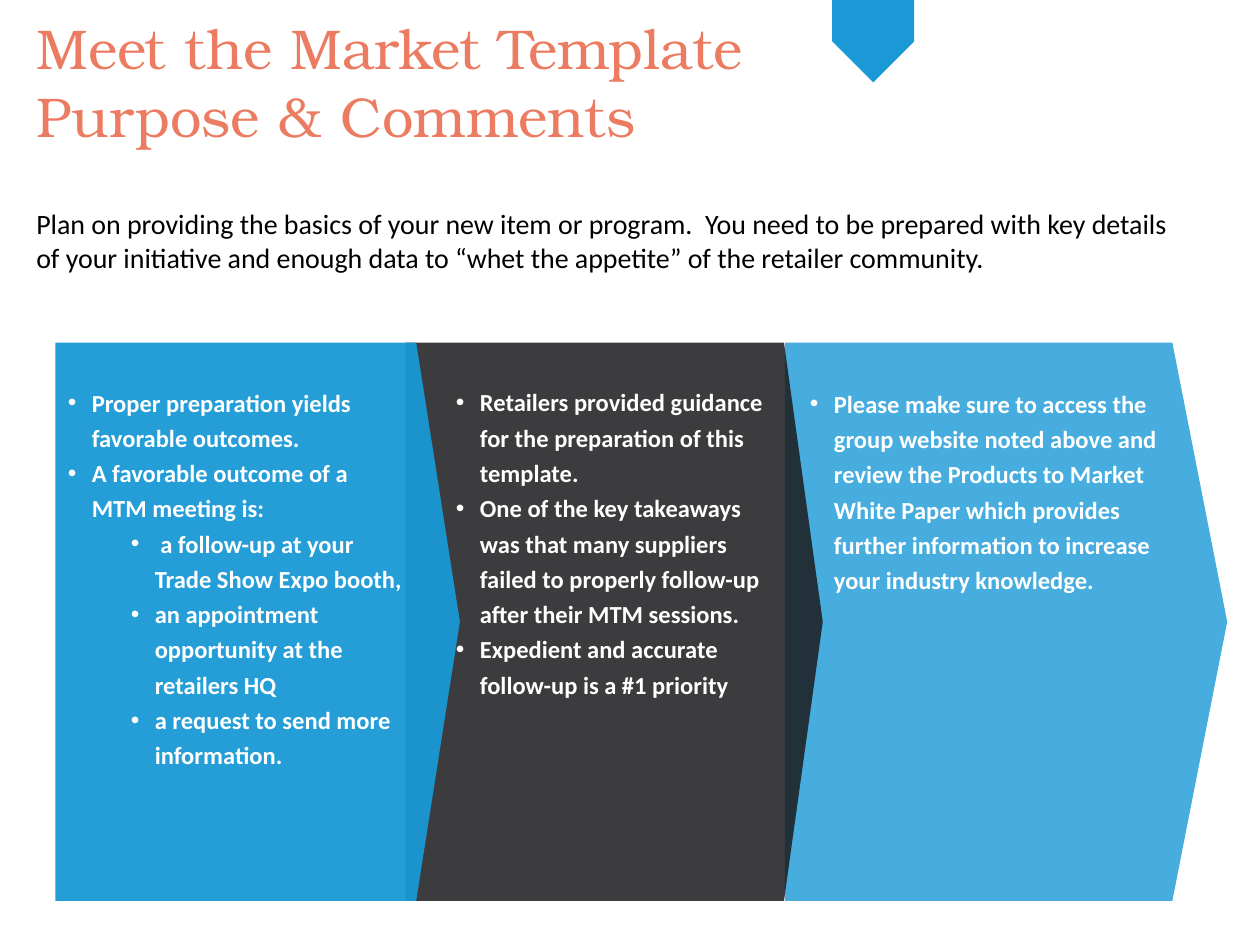
import pptx
import pptx.util
import pptx.dml.color
import pptx.enum.shapes
import pptx.enum.text
import pptx.oxml.ns
import lxml.etree

Inches, Pt = pptx.util.Inches, pptx.util.Pt
rgb = pptx.dml.color.RGBColor.from_string
qn = pptx.oxml.ns.qn
text = pptx.enum.text
kind = pptx.enum.shapes.MSO_SHAPE.PENTAGON

theme = {
    "blue": rgb("1A99D6"),
    "dark": rgb("1C1D1F"),
    "title": {"name": "TeX Gyre Bonum", "size": Pt(32), "bold": False, "color": rgb("EC7C61")},
    "intro": {"name": "Calibri", "size": Pt(16), "bold": False, "color": rgb("000000")},
    "list": {"name": "Calibri", "size": Pt(14), "bold": True, "color": rgb("FFFFFF")},
}
frame = {
    "word_wrap": True,
    "auto_size": text.MSO_AUTO_SIZE.NONE,
    "vertical_anchor": text.MSO_ANCHOR.TOP,
}


def write(box, lines, style, bullet=False):
    body = box.text_frame
    for key, value in frame.items():
        setattr(body, key, value)
    for i, (level, line) in enumerate(lines):
        para = body.paragraphs[0] if i == 0 else body.add_paragraph()
        para.alignment = text.PP_ALIGN.LEFT
        if bullet:
            para.level = level
            props = para._p.get_or_add_pPr()
            props.set("marL", str(Inches(0.19 + 0.5 * level)))
            props.set("indent", str(Inches(-0.19)))
            face = lxml.etree.SubElement(props, qn("a:buFont"))
            face.set("typeface", "Arial")
            mark = lxml.etree.SubElement(props, qn("a:buChar"))
            mark.set("char", "•")
            para.line_spacing = 1.2
        run = para.add_run()
        run.text = line
        for key, value in theme[style].items():
            if key == "color":
                run.font.color.rgb = value
            else:
                setattr(run.font, key, value)


def arrow(left, top, width, height, point, color, alpha=100):
    shape = slide.shapes.add_shape(kind, Inches(left), Inches(top), Inches(width), Inches(height))
    shape.adjustments[0] = point
    shape.shadow.inherit = False
    shape.fill.solid()
    shape.fill.fore_color.rgb = theme[color]
    shape.line.fill.background()
    if alpha < 100:
        tint = shape._element.spPr.find(qn("a:solidFill"))[0]
        lxml.etree.SubElement(tint, qn("a:alpha")).set("val", str(alpha * 1000))
    return shape


deck = pptx.Presentation()
deck.slide_width, deck.slide_height = Inches(10), Inches(7.5)
slide = deck.slides.add_slide(deck.slide_layouts[5])

title = slide.shapes.title
place = {"left": 0.19, "top": 0.06, "width": 7.06, "height": 1.18}
for key, value in place.items():
    setattr(title, key, Inches(value))
write(title, [(0, "Meet the Market Template Purpose & Comments")], "title")

intro = slide.shapes.add_textbox(Inches(0.19), Inches(1.59), Inches(9.33), Inches(0.64))
write(intro, [(0, "Plan on providing the basics of your new item or program.  You need to be prepared with key details of your initiative and enough data to “whet the appetite” of the retailer community.")], "intro")

for left, width, point, color, alpha in [
    (6.23, 3.51, 0.124, "blue", 80),
    (3.22, 3.31, 0.093, "dark", 86),
    (0.44, 3.21, 0.108, "blue", 95),
]:
    arrow(left, 2.72, width, 4.43, point, color, alpha)

lists = [
    (0.44, 2.98, 2.9, 3.19, [
        (0, "Proper preparation yields favorable outcomes."),
        (0, "A favorable outcome of a MTM meeting is:"),
        (1, " a follow-up at your Trade Show Expo booth,"),
        (1, "an appointment opportunity at the retailers HQ"),
        (1, "a request to send more information."),
    ]),
    (3.52, 2.98, 2.72, 2.63, [
        (0, "Retailers provided guidance for the preparation of this template."),
        (0, "One of the key takeaways was that many suppliers failed to properly follow-up after their MTM sessions."),
        (0, "Expedient and accurate follow-up is a #1 priority"),
    ]),
    (6.33, 2.99, 3.12, 1.8, [
        (0, "Please make sure to access the group website noted above and review the Products to Market White Paper which provides further information to increase your industry knowledge."),
    ]),
]
for left, top, width, height, lines in lists:
    box = slide.shapes.add_textbox(Inches(left), Inches(top), Inches(width), Inches(height))
    write(box, lines, "list", bullet=True)

badge = arrow(6.6, 0, 0.66, 0.65, 0.5, "blue")
badge.rotation = 90

deck.save("out.pptx")
